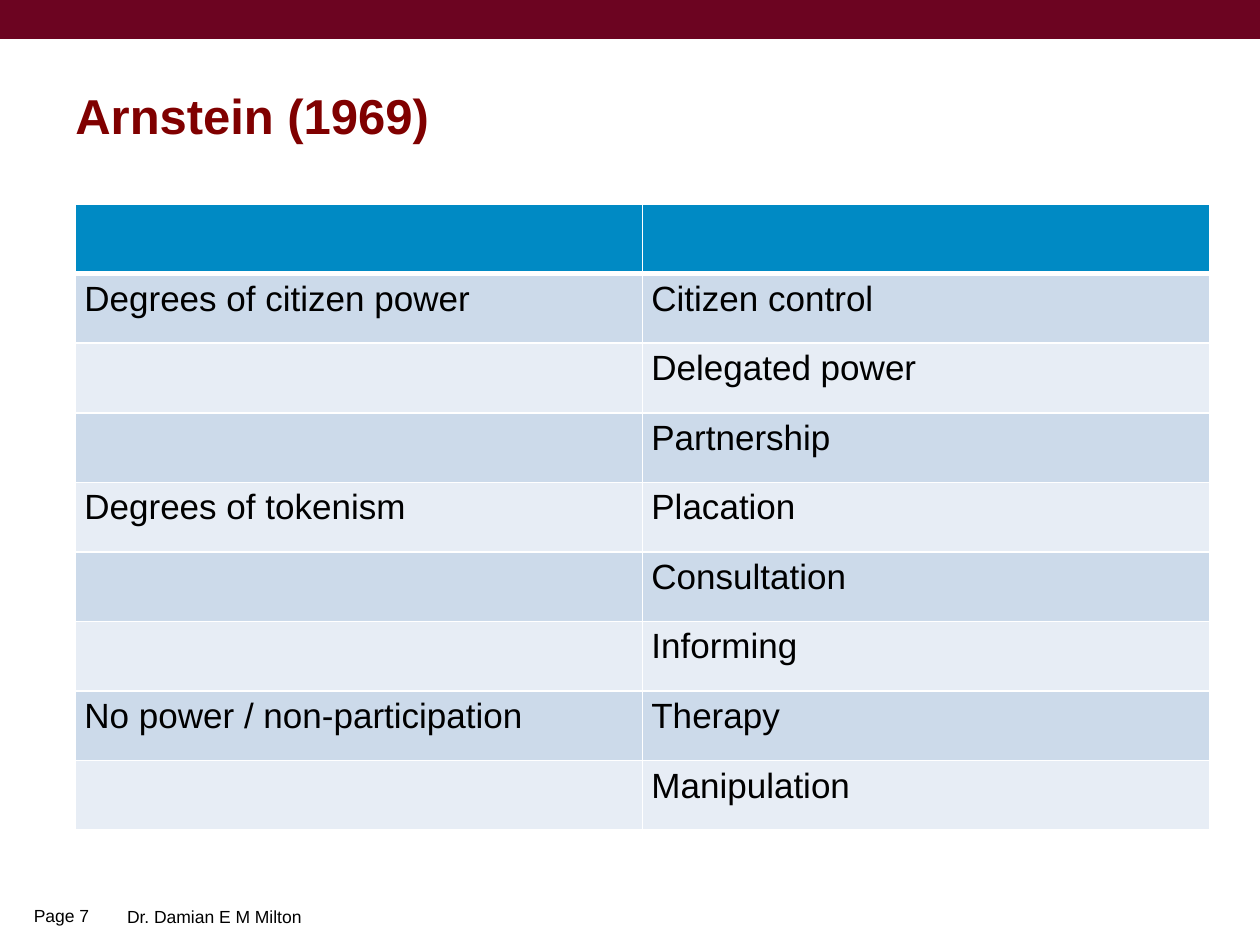
from dataclasses import dataclass

from lxml.etree import SubElement
from pptx import Presentation
from pptx.dml.color import RGBColor as Rgb
from pptx.enum.shapes import MSO_SHAPE as Shape
from pptx.enum.text import MSO_ANCHOR as Anchor
from pptx.oxml.ns import qn
from pptx.util import Inches, Pt


@dataclass(frozen=True)
class Theme:
    font: str = "Arial"
    banner: str = "6C0421"
    title: str = "800000"
    text: str = "000000"
    header: str = "008AC4"
    bands: tuple = ("CCDAEA", "E7EDF5")
    border: str = "FFFFFF"
    title_size: int = 28
    table_size: int = 20
    footer_size: int = 10


THEME = Theme()
WIDTH, HEIGHT = 10, 7.5
LADDER = {
    "Degrees of citizen power": ["Citizen control", "Delegated power", "Partnership"],
    "Degrees of tokenism": ["Placation", "Consultation", "Informing"],
    "No power / non-participation": ["Therapy", "Manipulation"],
}


def inches(box):
    return [Inches(length) for length in box]


def write(text_frame, text, size, color, bold=False):
    text_frame.text = text
    for run in text_frame.paragraphs[0].runs:
        run.font.name = THEME.font
        run.font.size = Pt(size)
        run.font.bold = bold
        run.font.color.rgb = Rgb.from_string(color)


def add_text(slide, box, text, size, color, bold=False, anchor=Anchor.MIDDLE):
    text_frame = slide.shapes.add_textbox(*inches(box)).text_frame
    text_frame.word_wrap = True
    text_frame.vertical_anchor = anchor
    write(text_frame, text, size, color, bold)


def add_banner(slide, box):
    banner = slide.shapes.add_shape(Shape.RECTANGLE, *inches(box))
    banner.shadow.inherit = False
    banner.fill.solid()
    banner.fill.fore_color.rgb = Rgb.from_string(THEME.banner)
    banner.line.fill.background()


def set_borders(cell, bottom):
    """Draw one-point borders, with the bottom one as wide as given."""
    properties = cell._tc.get_or_add_tcPr()
    for side, width in (("L", 1), ("R", 1), ("T", 1), ("B", bottom)):
        line = SubElement(properties, qn(f"a:ln{side}"), w=str(Pt(width)))
        fill = SubElement(line, qn("a:solidFill"))
        SubElement(fill, qn("a:srgbClr"), val=THEME.border)


def format_cell(cell, text, fill, bottom=1):
    set_borders(cell, bottom)
    cell.fill.solid()
    cell.fill.fore_color.rgb = Rgb.from_string(fill)
    if text:
        cell.margin_left = cell.margin_right = Inches(0.07)
        cell.margin_top = cell.margin_bottom = 0
        write(cell.text_frame, text, THEME.table_size, THEME.text)
        cell.text_frame.paragraphs[0].line_spacing = 1.15


def add_ladder(slide, box):
    """Place the table, naming each degree only beside its first rung."""
    rows = [
        ("" if index else degree, rung)
        for degree, rungs in LADDER.items()
        for index, rung in enumerate(rungs)
    ]
    table = slide.shapes.add_table(len(rows) + 1, 2, *inches(box)).table
    for row in table.rows:
        row.height = Inches(box[3] / len(table.rows))
    for cell in table.rows[0].cells:
        format_cell(cell, "", THEME.header, bottom=3)
    for index, texts in enumerate(rows):
        fill = THEME.bands[index % 2]
        for column, text in enumerate(texts):
            format_cell(table.cell(index + 1, column), text, fill)


def add_footer(slide, box):
    left, top, width, height = box
    page_width = 0.74
    add_text(slide, (left, top, page_width, height), "Page 7",
             THEME.footer_size, THEME.text)
    add_text(slide, (left + page_width, top + 0.02, width - page_width, height - 0.02),
             "Dr. Damian E M Milton", THEME.footer_size, THEME.text, anchor=Anchor.TOP)


def main():
    presentation = Presentation()
    presentation.slide_width, presentation.slide_height = inches((WIDTH, HEIGHT))
    slide = presentation.slides.add_slide(presentation.slide_layouts[6])
    add_banner(slide, (0, 0, WIDTH, 0.31))
    add_text(slide, (0.5, 0.6, 9.07, 0.63), "Arnstein (1969)",
             THEME.title_size, THEME.title, bold=True)
    add_ladder(slide, (0.6, 1.62, 9, 4.97))
    add_footer(slide, (0.17, 7.12, 7.83, 0.29))
    presentation.save("out.pptx")


if __name__ == "__main__":
    main()
